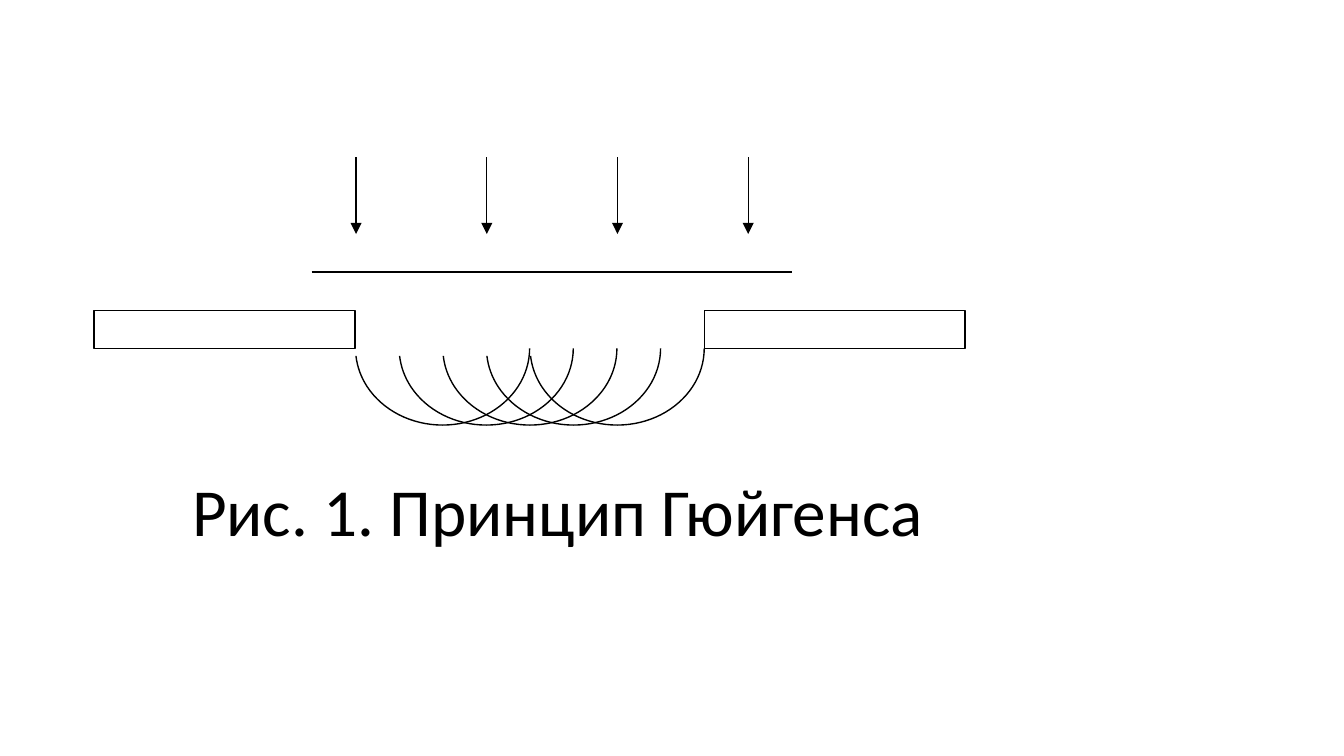
from pptx import Presentation
from pptx.dml.color import RGBColor
from pptx.enum.shapes import MSO_CONNECTOR, MSO_SHAPE
from pptx.enum.text import MSO_ANCHOR, PP_ALIGN
from pptx.oxml.ns import qn
from pptx.util import Cm, Pt
from lxml.etree import SubElement

COLORS = {"ink": "000000", "paper": "FFFFFF"}
INK = RGBColor.from_string(COLORS["ink"])
PAPER = RGBColor.from_string(COLORS["paper"])

presentation = Presentation()
presentation.slide_width = Cm(25.4)
presentation.slide_height = Cm(14.28)
slide = presentation.slides.add_slide(presentation.slide_layouts[6])


def add_outlined(kind, left, top, width, height):
    shape = slide.shapes.add_shape(kind, Cm(left), Cm(top), Cm(width), Cm(height))
    shape.shadow.inherit = False
    shape.line.color.rgb = INK
    shape.line.width = Pt(0.75)
    return shape


def add_line(x1, y1, x2, y2, arrow=False):
    line = slide.shapes.add_connector(
        MSO_CONNECTOR.STRAIGHT, Cm(x1), Cm(y1), Cm(x2), Cm(y2))
    line.line.color.rgb = INK
    line.line.width = Pt(0.75)
    if arrow:
        SubElement(line.line._get_or_add_ln(), qn("a:tailEnd"), type="triangle")
    SubElement(line._element.spPr, qn("a:effectLst"))


# Screen with an opening
for wall_left in (1.78, 13.31):
    wall = add_outlined(MSO_SHAPE.RECTANGLE, wall_left, 5.87, 4.93, 0.71)
    wall.fill.solid()
    wall.fill.fore_color.rgb = PAPER

# Incoming rays and the flat wave front
for i in range(4):
    ray_x = 6.73 + i * 2.47
    add_line(ray_x, 2.97, ray_x, 4.42, arrow=True)
add_line(5.89, 5.14, 14.96, 5.14)

# Secondary waves: lower halves of equal ellipses, from 0 to 175 degrees
for i in range(5):
    wave = add_outlined(MSO_SHAPE.ARC, 6.72 + i * 0.825, 5.13, 3.29, 2.9)
    wave.adjustments[0] = 0
    wave.adjustments[1] = 175 * 0.6
    wave.fill.background()

# Caption
caption = slide.shapes.add_textbox(Cm(1.78), Cm(8.74), Cm(16.46), Cm(2.16))
caption.fill.solid()
caption.fill.fore_color.rgb = PAPER
text_frame = caption.text_frame
text_frame.word_wrap = True
text_frame.vertical_anchor = MSO_ANCHOR.TOP
text_frame.margin_left = Cm(1.85)
text_frame.text = "Рис. 1. Принцип Гюйгенса"
paragraph = text_frame.paragraphs[0]
paragraph.alignment = PP_ALIGN.LEFT
paragraph.space_after = Pt(10)
font = paragraph.runs[0].font
font.name = "Calibri"
font.size = Pt(36)
font.color.rgb = INK

presentation.save("out.pptx")
